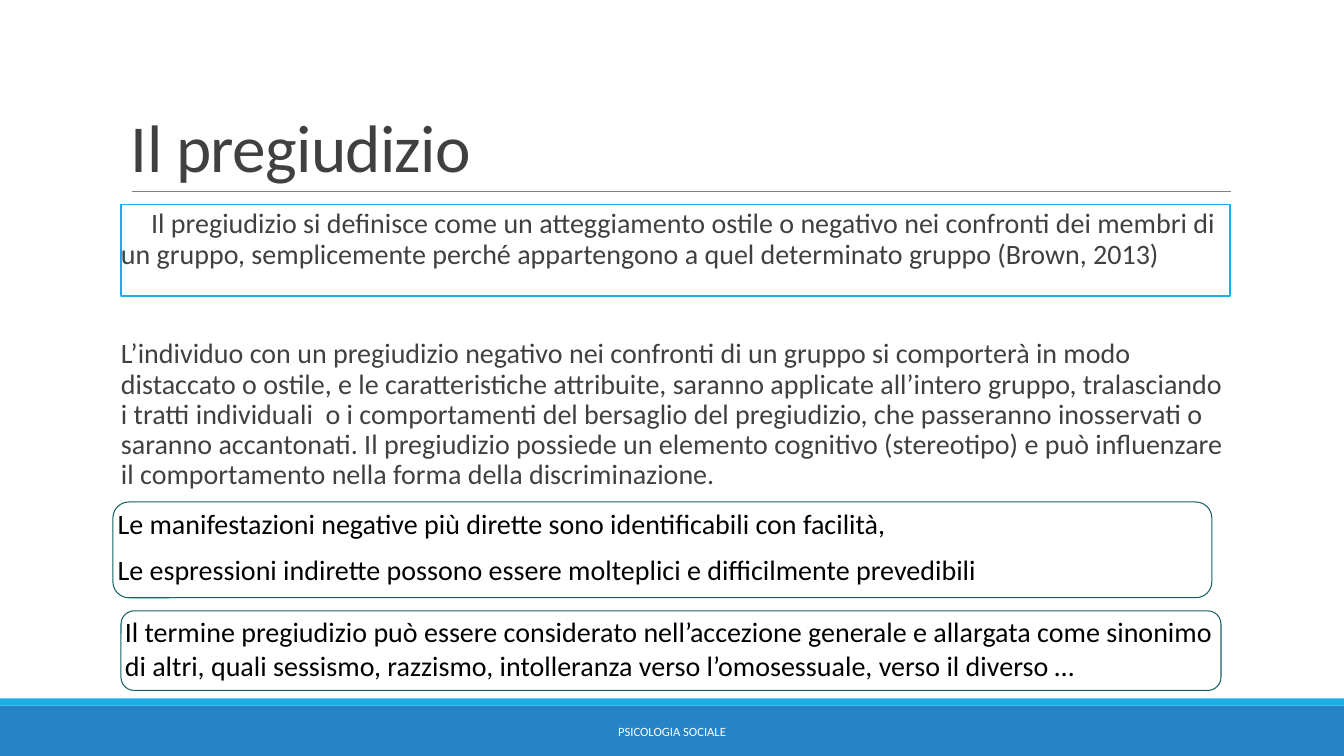
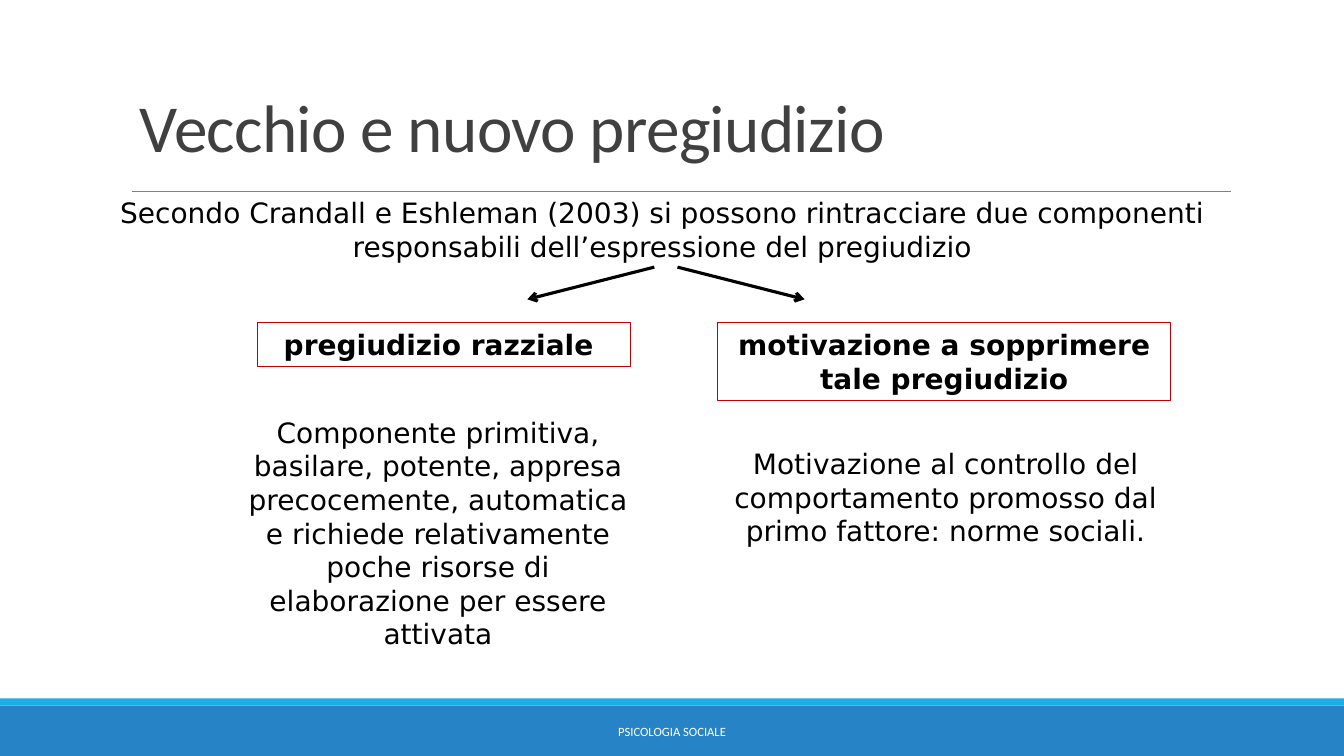
from dataclasses import dataclass

from lxml.etree import SubElement
from pptx import Presentation
from pptx.dml.color import RGBColor
from pptx.enum.shapes import MSO_CONNECTOR, MSO_SHAPE
from pptx.enum.text import MSO_ANCHOR, PP_ALIGN
from pptx.oxml.ns import qn
from pptx.util import Inches, Pt


@dataclass(frozen=True)
class Theme:
    text: str = "404040"
    black: str = "000000"
    white: str = "FFFFFF"
    band: str = "2683C6"
    accent: str = "1CADE4"
    rule: str = "808080"
    teal: str = "146266"
    red: str = "C00000"
    font: str = "Calibri"
    diagram_font: str = "DejaVu Sans"
    title_size: int = 48
    body_size: int = 20
    footer_size: int = 9


THEME = Theme()
FOOTER = "PSICOLOGIA SOCIALE"

PREJUDICE = {
    "title": "Il pregiudizio",
    "title_at": (1.2, 0.31, 11, 1.59),
    "definition": "Il pregiudizio si definisce come un atteggiamento ostile o negativo nei confronti dei membri di un gruppo, semplicemente perché appartengono a quel determinato gruppo (Brown, 2013)",
    "behaviour": "L’individuo con un pregiudizio negativo nei confronti di un gruppo si comporterà in modo distaccato o ostile, e le caratteristiche attribuite, saranno applicate all’intero gruppo, tralasciando i tratti individuali  o i comportamenti del bersaglio del pregiudizio, che passeranno inosservati o saranno accantonati. Il pregiudizio possiede un elemento cognitivo (stereotipo) e può influenzare il comportamento nella forma della discriminazione.",
    "notes": [
        ((1.12, 4.98, 10.9, 0.95), [
            "Le manifestazioni negative più dirette sono identificabili con facilità,",
            "Le espressioni indirette possono essere molteplici e difficilmente prevedibili",
        ]),
        ((1.2, 6.06, 10.91, 0.79), [
            "Il termine pregiudizio può essere considerato nell’accezione generale e allargata come sinonimo di altri, quali sessismo, razzismo, intolleranza verso l’omosessuale, verso il diverso …",
        ]),
    ],
}

COMPONENTS = {
    "title": "Vecchio e nuovo pregiudizio",
    "title_at": (1.29, 0.11, 11, 1.59),
    "intro": "Secondo Crandall e Eshleman (2003) si possono rintracciare due componenti responsabili dell’espressione del pregiudizio",
    "branches": [
        {
            "name": "pregiudizio razziale ",
            "name_at": (2.55, 3.2, 3.7, 0.44),
            "detail": "Componente primitiva, basilare, potente, appresa precocemente, automatica e richiede relativamente poche risorse di elaborazione per essere attivata",
            "detail_at": (2.28, 4.07, 4.13, 2.46),
            "arrow": (6.49, 2.65, 5.23, 2.97),
        },
        {
            "name": "motivazione a sopprimere tale pregiudizio",
            "name_at": (7.12, 3.2, 4.49, 0.77),
            "detail": "Motivazione al controllo del comportamento promosso dal primo fattore: norme sociali.",
            "detail_at": (6.88, 4.38, 5, 1.11),
            "arrow": (6.72, 2.65, 7.98, 2.97),
        },
    ],
}


def add_box(slide, at, kind=MSO_SHAPE.RECTANGLE, fill=None, line=None, width=0.75):
    shape = slide.shapes.add_shape(kind, *map(Inches, at))
    shape.shadow.inherit = False
    if fill:
        shape.fill.solid()
        shape.fill.fore_color.rgb = RGBColor.from_string(fill)
    else:
        shape.fill.background()
    if line:
        shape.line.color.rgb = RGBColor.from_string(line)
        shape.line.width = Pt(width)
    else:
        shape.line.fill.background()
    return shape


def write(shape, paragraphs, size=THEME.body_size, color=THEME.black, font=THEME.font,
          bold=False, align=PP_ALIGN.LEFT, anchor=MSO_ANCHOR.TOP, insets=(0.1, 0.05),
          spacing=1.0, before=0):
    frame = shape.text_frame
    frame.word_wrap = True
    frame.vertical_anchor = anchor
    frame.margin_left = frame.margin_right = Inches(insets[0])
    frame.margin_top = frame.margin_bottom = Inches(insets[1])
    for index, text in enumerate(paragraphs):
        paragraph = frame.add_paragraph() if index else frame.paragraphs[0]
        paragraph.alignment = align
        paragraph.line_spacing = spacing
        paragraph.space_before = Pt(before if index else 0)
        run = paragraph.add_run()
        run.text = text
        run.font.size = Pt(size)
        run.font.name = font
        run.font.bold = bold
        run.font.color.rgb = RGBColor.from_string(color)


def add_text(slide, at, text, **style):
    shape = slide.shapes.add_textbox(*map(Inches, at))
    write(shape, [text], **style)
    return shape


def add_line(slide, ends, color, width, arrow=False):
    connector = slide.shapes.add_connector(MSO_CONNECTOR.STRAIGHT, *map(Inches, ends))
    connector.line.color.rgb = RGBColor.from_string(color)
    connector.line.width = Pt(width)
    properties = connector.element.spPr
    if arrow:
        SubElement(properties.find(qn("a:ln")), qn("a:tailEnd"), type="arrow")
    SubElement(properties, qn("a:effectLst"))


def add_base_slide(presentation, content):
    slide = presentation.slides.add_slide(presentation.slide_layouts[6])
    add_box(slide, (0, 7, 13.33, 0.5), fill=THEME.band)
    add_box(slide, (0, 6.93, 13.33, 0.07), fill=THEME.accent)
    add_line(slide, (1.31, 1.9, 12.21, 1.9), THEME.rule, 0.5)
    title = add_text(slide, content["title_at"], content["title"], size=THEME.title_size,
                     color=THEME.text, anchor=MSO_ANCHOR.BOTTOM, spacing=0.85)
    title.element.xpath(".//a:rPr")[0].set("spc", "-50")
    add_text(slide, (4.03, 7.06, 5.27, 0.4), FOOTER, size=THEME.footer_size,
             color=THEME.white, align=PP_ALIGN.CENTER, anchor=MSO_ANCHOR.MIDDLE)
    return slide


def build_prejudice(presentation):
    slide = add_base_slide(presentation, PREJUDICE)
    body = {"color": THEME.text, "insets": (0, 0.05), "spacing": 0.9}
    definition = add_box(slide, (1.2, 2.03, 11, 0.91), line=THEME.accent, width=1.25)
    write(definition, [PREJUDICE["definition"]], **body)
    definition.element.xpath(".//a:pPr")[0].set("indent", str(Inches(0.3)))
    add_text(slide, (1.2, 3.32, 11, 1.6), PREJUDICE["behaviour"], **body)
    for at, paragraphs in PREJUDICE["notes"]:
        note = add_box(slide, at, MSO_SHAPE.ROUNDED_RECTANGLE, line=THEME.teal)
        write(note, paragraphs, insets=(0, 0), before=9)


def build_components(presentation):
    slide = add_base_slide(presentation, COMPONENTS)
    centred = {"font": THEME.diagram_font, "align": PP_ALIGN.CENTER}
    add_text(slide, (0.33, 1.89, 12.48, 0.77), COMPONENTS["intro"], **centred)
    for branch in COMPONENTS["branches"]:
        name = add_box(slide, branch["name_at"], line=THEME.red)
        write(name, [branch["name"]], bold=True, **centred)
        add_text(slide, branch["detail_at"], branch["detail"], **centred)
        add_line(slide, branch["arrow"], THEME.black, 2.25, arrow=True)


def main():
    presentation = Presentation()
    presentation.slide_width = Inches(13.33)
    presentation.slide_height = Inches(7.5)
    build_prejudice(presentation)
    build_components(presentation)
    presentation.save("out.pptx")


if __name__ == "__main__":
    main()
